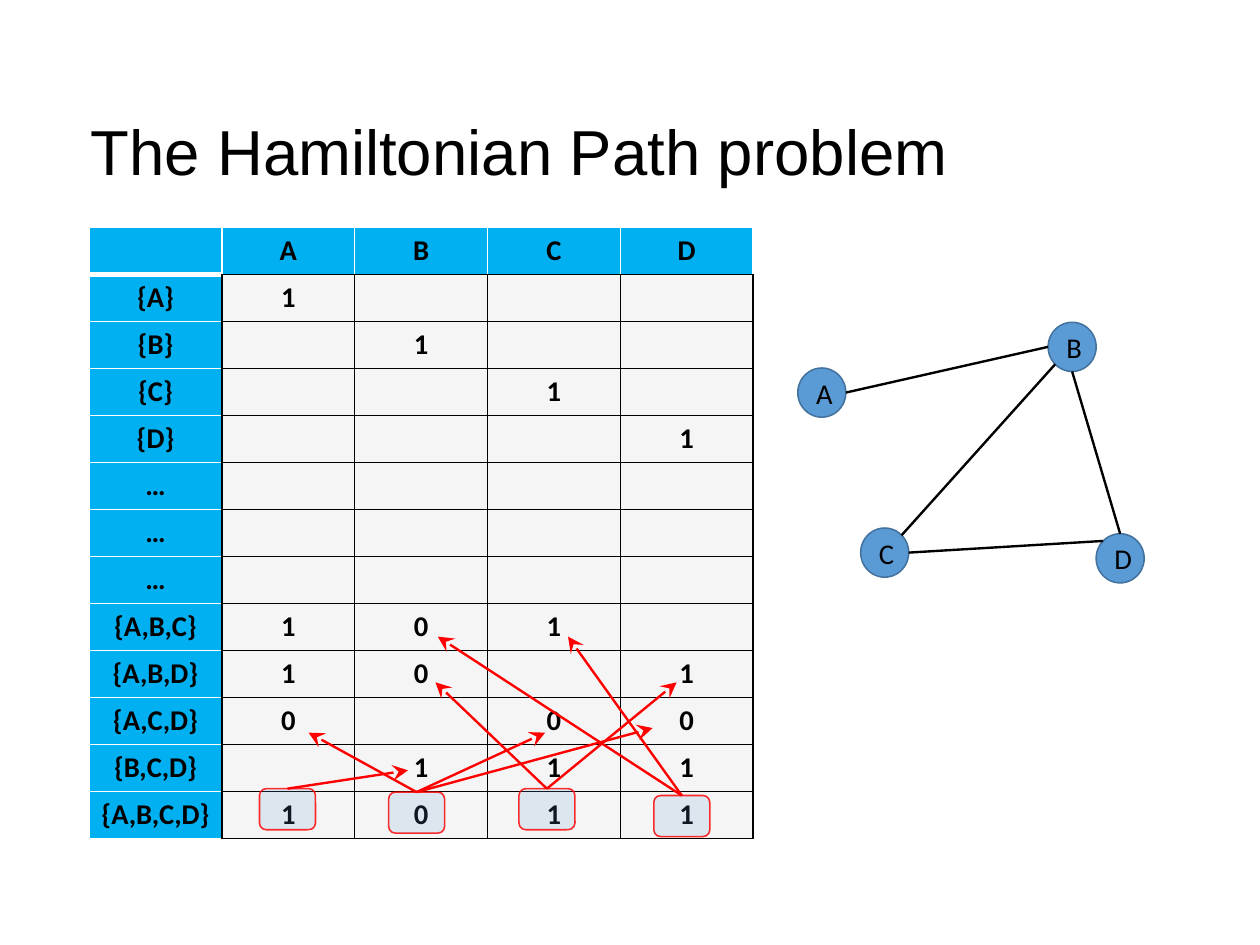
from math import cos, radians, sin

from lxml import etree
from pptx import Presentation
from pptx.dml.color import RGBColor
from pptx.enum.shapes import MSO_CONNECTOR, MSO_SHAPE
from pptx.enum.text import MSO_ANCHOR, PP_ALIGN
from pptx.oxml.ns import qn
from pptx.util import Inches, Pt

ELLIPSE = MSO_SHAPE.OVAL
ROUNDED = MSO_SHAPE.ROUNDED_RECTANGLE
STRAIGHT = MSO_CONNECTOR.STRAIGHT
MIDDLE = MSO_ANCHOR.MIDDLE
LEFT = PP_ALIGN.LEFT
CENTER = PP_ALIGN.CENTER

CM_PER_INCH = 2.54
SLIDE_WIDTH, SLIDE_HEIGHT = 28 / CM_PER_INCH, 21 / CM_PER_INCH

BLACK, WHITE, RED = "000000", "FFFFFF", "FF0000"
HEADER_BLUE, NODE_BLUE, NODE_EDGE = "00B0F0", "5B9BD5", "43739E"
BODY_GRAY = "F2F2F2"

NODE_WIDTH, NODE_HEIGHT = 0.42, 0.43
NODES = {"A": (6.98, 3.22), "B": (9.17, 2.82), "C": (7.53, 4.62), "D": (9.59, 4.67)}
EDGES = [("A", 0, "B", 180), ("C", 45, "B", 225), ("D", 135, "C", 0), ("B", 270, "D", 90)]

ROWS = [
    ["", "A", "B", "C", "D"],
    ["{A}", "1", "", "", ""],
    ["{B}", "", "1", "", ""],
    ["{C}", "", "", "1", ""],
    ["{D}", "", "", "", "1"],
    ["…", "", "", "", ""],
    ["…", "", "", "", ""],
    ["…", "", "", "", ""],
    ["{A,B,C}", "1", "0", "1", ""],
    ["{A,B,D}", "1", "0", "", "1"],
    ["{A,C,D}", "0", "", "0", "0"],
    ["{B,C,D}", "", "1", "1", "1"],
    ["{A,B,C,D}", "1", "0", "1", "1"],
]

MARKER_WIDTH, MARKER_HEIGHT = 0.49, 0.36
MARKERS = [
    (2.27, 6.9, [(3.57, 6.74)]),
    (3.4, 6.93, [(2.7, 6.41), (4.77, 6.41), (5.71, 6.37)]),
    (4.54, 6.9, [(3.81, 5.97), (5.92, 5.97)]),
    (5.72, 6.96, [(3.83, 5.57), (4.97, 5.57)]),
]


def color(value):
    """Turn a hex string into a colour."""
    return RGBColor.from_string(value)


def paint(fill, value, opacity=100):
    """Give a fill a solid colour with an opacity in percent."""
    fill.solid()
    fill.fore_color.rgb = color(value)
    if opacity < 100:
        for solid in fill._xPr.iter(qn("a:solidFill")):
            alpha = etree.SubElement(solid[0], qn("a:alpha"))
            alpha.set("val", str(opacity * 1000))


def write(paragraph, text, size, font_name, alignment, bold=False):
    """Add one black run to a paragraph."""
    paragraph.alignment = alignment
    run = paragraph.add_run()
    run.text = text
    run.font.size = Pt(size)
    run.font.name = font_name
    run.font.bold = bold
    run.font.color.rgb = color(BLACK)


def add_title(slide, text):
    """Add the slide heading."""
    box = slide.shapes.add_textbox(Inches(0.79), Inches(0.75), Inches(9.25), Inches(1.12))
    frame = box.text_frame
    frame.word_wrap = True
    frame.vertical_anchor = MIDDLE
    frame.margin_left = frame.margin_right = frame.margin_top = frame.margin_bottom = 0
    write(frame.paragraphs[0], text, 40, "Arial", LEFT)


def add_border(cell, position, side, value, width):
    """Draw one side of a table cell."""
    line = etree.Element(qn(f"a:ln{side}"), w=str(Pt(width)))
    solid = etree.SubElement(line, qn("a:solidFill"))
    etree.SubElement(solid, qn("a:srgbClr"), val=value)
    cell._tc.get_or_add_tcPr().insert(position, line)


def cell_borders(row, column):
    """Return colour and width for the left, right, top and bottom of a cell."""
    if row == 0:
        bottom = (WHITE, 3) if column == 0 else (BLACK, 1)
        return {"L": (WHITE, 1), "R": (WHITE, 1), "T": (WHITE, 1), "B": bottom}
    if column == 0:
        top = (WHITE, 3 if row == 1 else 1)
        return {"L": (WHITE, 1), "R": (BLACK, 1), "T": top, "B": (WHITE, 1)}
    return dict.fromkeys("LRTB", (BLACK, 1))


def add_subset_table(slide):
    """Add the table of vertex subsets and end vertices."""
    frame = slide.shapes.add_table(
        len(ROWS), len(ROWS[0]), Inches(0.78), Inches(1.99), Inches(5.81), Inches(5.35))
    table = frame.table
    table.first_row = table.horz_banding = False
    for row, texts in enumerate(ROWS):
        for column, text in enumerate(texts):
            cell = table.cell(row, column)
            if row == 0 or column == 0:
                paint(cell.fill, HEADER_BLUE)
            else:
                paint(cell.fill, BODY_GRAY, 74)
            for position, (side, border) in enumerate(cell_borders(row, column).items()):
                add_border(cell, position, side, *border)
            if text:
                write(cell.text_frame.paragraphs[0], text, 18, "Calibri", CENTER, True)


def add_outlined(slide, kind, left, top, width, height, line_color, opacity=100, line_opacity=100):
    """Add a blue preset shape with a thin outline."""
    shape = slide.shapes.add_shape(kind, Inches(left), Inches(top), Inches(width), Inches(height))
    shape.shadow.inherit = False
    paint(shape.fill, NODE_BLUE, opacity)
    paint(shape.line.fill, line_color, line_opacity)
    shape.line.width = Pt(1)
    return shape


def add_line(slide, start, end, value, arrow=False):
    """Add a straight line, with an arrowhead at its end if asked."""
    points = [Inches(length) for length in (*start, *end)]
    connector = slide.shapes.add_connector(STRAIGHT, *points)
    connector.line.color.rgb = color(value)
    connector.line.width = Pt(1.5)
    if arrow:
        line = connector.line._get_or_add_ln()
        etree.SubElement(line, qn("a:tailEnd"), type="stealth", w="lg", len="lg")
    etree.SubElement(connector._element.spPr, qn("a:effectLst"))


def node_site(name, angle):
    """Return the point on a node's outline at an angle in degrees."""
    left, top = NODES[name]
    x = left + NODE_WIDTH / 2 * (1 + cos(radians(angle)))
    y = top + NODE_HEIGHT / 2 * (1 - sin(radians(angle)))
    return x, y


def add_graph(slide):
    """Add the four vertices and the edges between them."""
    for name, (left, top) in NODES.items():
        node = add_outlined(slide, ELLIPSE, left, top, NODE_WIDTH, NODE_HEIGHT, NODE_EDGE)
        node.text_frame.vertical_anchor = MIDDLE
        write(node.text_frame.paragraphs[0], name, 18, "Calibri", CENTER)
    for first, first_angle, second, second_angle in EDGES:
        add_line(slide, node_site(first, first_angle), node_site(second, second_angle), BLACK)


def add_markers(slide):
    """Frame the last row's values and point to the cells they come from."""
    for left, top, targets in MARKERS:
        add_outlined(slide, ROUNDED, left, top, MARKER_WIDTH, MARKER_HEIGHT, RED, 16, 82)
        for target in targets:
            add_line(slide, (left + MARKER_WIDTH / 2, top), target, RED, arrow=True)


def main():
    """Build and save the slide."""
    presentation = Presentation()
    presentation.slide_width = Inches(SLIDE_WIDTH)
    presentation.slide_height = Inches(SLIDE_HEIGHT)
    slide = presentation.slides.add_slide(presentation.slide_layouts[6])
    add_title(slide, "The Hamiltonian Path problem")
    add_subset_table(slide)
    add_graph(slide)
    add_markers(slide)
    presentation.save("out.pptx")


if __name__ == "__main__":
    main()
